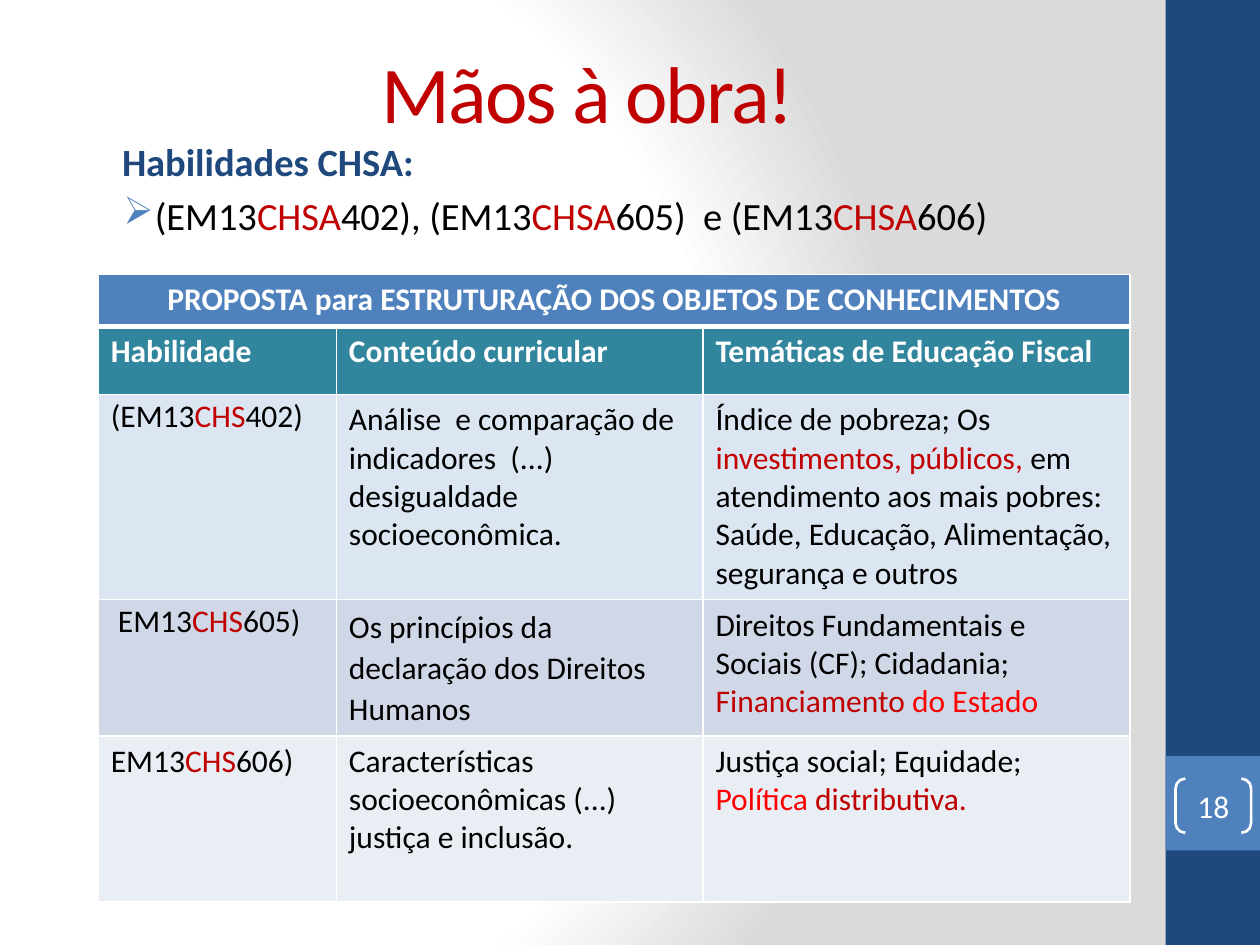
from lxml import etree
from pptx import Presentation
from pptx.dml.color import RGBColor
from pptx.enum.shapes import MSO_SHAPE
from pptx.enum.text import MSO_ANCHOR, PP_ALIGN
from pptx.oxml import parse_xml
from pptx.oxml.ns import nsdecls, qn
from pptx.util import Inches, Pt

RECT = MSO_SHAPE.RECTANGLE
PAIR = MSO_SHAPE.DOUBLE_BRACKET
MID = MSO_ANCHOR.MIDDLE
LEFT, MIDDLE = PP_ALIGN.LEFT, PP_ALIGN.CENTER

HUES = {
    "white": "FFFFFF", "black": "000000", "gray": "DADADA",
    "navy": "1F497D", "blue": "4F81BD", "teal": "31859C",
    "red": "C00000", "bright": "FF0000",
    "pale": "DCE6F2", "mist": "D0D8E8", "ice": "E9EDF4",
}
MARKS = {"*": "red", "!": "bright"}

COLS = [7.56, 11.64, 13.56]
ROWS = [1.64, 2.16, 6.52, 4.32, 5.28]
FILLS = ["blue", "teal", "pale", "mist", "ice"]
CELLS = [
    [["PROPOSTA para ESTRUTURAÇÃO DOS OBJETOS DE CONHECIMENTOS"]],
    [["Habilidade"], ["Conteúdo curricular"], ["Temáticas de Educação Fiscal"]],
    [["(EM13|*CHS|402)"],
     ["Análise  e comparação de indicadores  (...) desigualdade socioeconômica."],
     ["Índice de pobreza; Os |*investimentos, públicos, |em atendimento aos mais pobres:",
      "Saúde, Educação, Alimentação, segurança e outros"]],
    [[" EM13|*CHS|605)"],
     ["Os princípios da declaração dos Direitos Humanos"],
     ["Direitos Fundamentais e Sociais (CF); Cidadania; |*Financiamento |!do Estado"]],
    [["EM13|*CHS|606)"],
     ["Características socioeconômicas (...) justiça e inclusão."],
     ["Justiça social; Equidade; |!Política |*distributiva."]],
]
TIGHT = [(2, 0), (3, 0)]
LOOSE = TIGHT + [(3, 1)]


class Sheet:
    font = "Calibri"
    unit = 0.25

    def __init__(self, deck):
        self.slide = deck.slides.add_slide(deck.slide_layouts[6])
        self.shapes = self.slide.shapes

    def span(self, *cells):
        return [Inches(cell * self.unit) for cell in cells]

    def hue(self, name):
        return RGBColor.from_string(HUES[name])

    def back(self, stops):
        marks = "".join(
            f'<a:gs pos="{pos * 1000}"><a:srgbClr val="{HUES[name]}"/></a:gs>'
            for pos, name in stops)
        node = parse_xml(
            f'<p:bg {nsdecls("p", "a")}><p:bgPr><a:gradFill rotWithShape="1">'
            f'<a:gsLst>{marks}</a:gsLst><a:path path="circle">'
            '<a:fillToRect l="20000" t="50000" r="100000" b="50000"/>'
            '</a:path></a:gradFill><a:effectLst/></p:bgPr></p:bg>')
        self.slide.element.cSld.insert(0, node)

    def put(self, para, text, size, color="black", bold=False, align=LEFT):
        para.alignment = align
        para.font.name, para.font.size, para.font.bold = self.font, Pt(size), bold
        for part in text.split("|"):
            name = MARKS.get(part[0], color)
            run = para.add_run()
            run.text = part[1:] if part[0] in MARKS else part
            run.font.color.rgb = self.hue(name)
        return para

    def text(self, box):
        frame = self.shapes.add_textbox(*self.span(*box)).text_frame
        frame.word_wrap = True
        return frame

    def block(self, box, fill):
        shape = self.shapes.add_shape(RECT, *self.span(*box))
        shape.shadow.inherit = False
        shape.fill.solid()
        shape.fill.fore_color.rgb = self.hue(fill)
        shape.line.fill.background()

    def badge(self, box, text):
        shape = self.shapes.add_shape(PAIR, *self.span(*box))
        shape.shadow.inherit = False
        shape.adjustments[0] = 0.18
        shape.fill.background()
        shape.line.color.rgb = self.hue("white")
        shape.line.width = Pt(1.5)
        frame = shape.text_frame
        frame.margin_left = frame.margin_right = 0
        frame.margin_top = frame.margin_bottom = 0
        frame.vertical_anchor = MID
        self.put(frame.paragraphs[0], text, 18, "white", align=MIDDLE)

    def edge(self, cell, top, base):
        props = cell._tc.get_or_add_tcPr()
        for at, (side, width) in enumerate(
                [("L", 1), ("R", 1), ("T", top), ("B", base)]):
            props.insert(at, parse_xml(
                f'<a:ln{side} {nsdecls("a")} w="{Pt(width)}"><a:solidFill>'
                f'<a:srgbClr val="{HUES["white"]}"/></a:solidFill></a:ln{side}>'))

    def table(self, left, top):
        box = self.span(left, top, sum(COLS), sum(ROWS))
        grid = self.shapes.add_table(len(ROWS), len(COLS), *box).table
        for col, width in zip(grid.columns, self.span(*COLS)):
            col.width = width
        for row, height in zip(grid.rows, self.span(*ROWS)):
            row.height = height
        grid.cell(0, 0).merge(grid.cell(0, len(COLS) - 1))
        for r, fill in enumerate(FILLS):
            for c in range(len(COLS)):
                cell = grid.cell(r, c)
                cell.fill.solid()
                cell.fill.fore_color.rgb = self.hue(fill)
                self.edge(cell, 3 if r == 1 else 1, 3 if r == 0 else 1)
        for r, row in enumerate(CELLS):
            for c, lines in enumerate(row):
                self.fill(grid.cell(r, c), lines, r, c)

    def fill(self, cell, lines, r, c):
        if (r, c) in TIGHT:
            cell.margin_top = cell.margin_bottom = 0
        head = r < 2
        frame = cell.text_frame
        for i, line in enumerate(lines):
            para = frame.add_paragraph() if i else frame.paragraphs[0]
            self.put(para, line, 18, "white" if head else "black", head,
                     LEFT if r else MIDDLE)
            if (r, c) in LOOSE:
                para.line_spacing = 1.07

    def indent(self, para, margin, hang=0):
        props = para._p.get_or_add_pPr()
        props.set("marL", str(Inches(margin)))
        props.set("indent", str(Inches(hang)))
        return props

    def bullet(self, para, mark, color):
        props = self.indent(para, 0.38, -0.25)
        tint = etree.Element(qn("a:buClr"))
        etree.SubElement(tint, qn("a:srgbClr"), val=HUES[color])
        sign = etree.Element(qn("a:buChar"), char=mark)
        rest = props.find(qn("a:defRPr"))
        rest.addprevious(tint)
        rest.addprevious(sign)


def main():
    deck = Presentation()
    deck.slide_width, deck.slide_height = Inches(10), Inches(7.5)
    sheet = Sheet(deck)
    sheet.back([(0, "white"), (75, "white"), (100, "gray")])
    sheet.block((37, 0, 3, 30), "navy")
    sheet.block((37, 24, 3, 3), "blue")

    title = sheet.text((2, 1.2, 33.32, 3.4))
    title.vertical_anchor = MID
    para = sheet.put(title.paragraphs[0], "Mãos à obra!", 46, "red", align=MIDDLE)
    para.runs[0].font._element.set("spc", "-100")

    body = sheet.text((3, 4.2, 33, 4))
    para = sheet.put(body.paragraphs[0], "Habilidades CHSA:", 22, "navy", True)
    sheet.indent(para, 0.12)
    para = sheet.put(
        body.add_paragraph(),
        "(EM13|*CHSA|402), (EM13|*CHSA|605)  e (EM13|*CHSA|606)", 22)
    para.space_before = Pt(4.4)
    sheet.bullet(para, "➢", "blue")

    sheet.badge((37.32, 24.72, 2.4, 1.72), "18")
    sheet.table(3.12, 8.72)
    deck.save("out.pptx")


if __name__ == "__main__":
    main()
